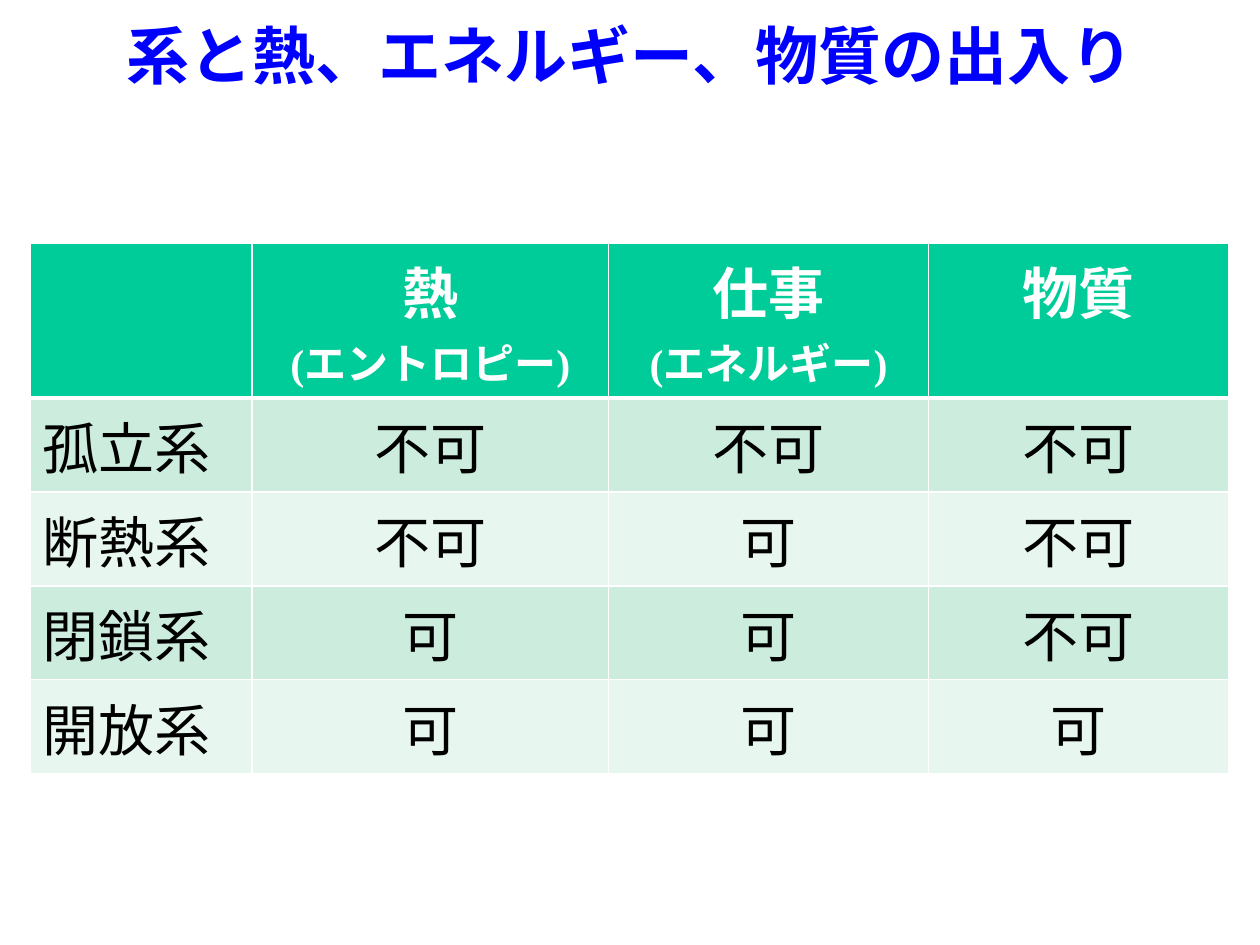
import pptx
import pptx.util
import pptx.dml.color
import pptx.enum.lang
import pptx.enum.text
import pptx.oxml
from pptx.oxml.ns import nsdecls

Inches = pptx.util.Inches
RGBColor = pptx.dml.color.RGBColor
ALIGN = pptx.enum.text.PP_ALIGN

BLUE = RGBColor(0x00, 0x00, 0xFF)
WHITE = RGBColor(0xFF, 0xFF, 0xFF)
BLACK = RGBColor(0x00, 0x00, 0x00)
GREEN = RGBColor(0x00, 0xCC, 0x99)
BANDS = [RGBColor(0xCC, 0xEC, 0xDE), RGBColor(0xE7, 0xF6, 0xEF)]
FONT = "Times New Roman"

# Content: a header cell is a list of paragraphs, each a list of (text, size);
# "\v" ends a line inside a paragraph
TITLE = "系と熱、エネルギー、物質の出入り"
HEADS = [
    [],
    [[("熱", 32)], [("(エントロピー)", 24)]],
    [[("仕事\v", 32), ("(エネルギー)", 24)]],
    [[("物質", 32)]],
]
ROWS = [
    ("孤立系", "不可", "不可", "不可"),
    ("断熱系", "不可", "可", "不可"),
    ("閉鎖系", "可", "可", "不可"),
    ("開放系", "可", "可", "可"),
]
WIDTHS = [1.76, 2.83, 2.54, 2.38]
HEIGHTS = [0.75] + [0.72] * len(ROWS)


def write(frame, paras, color=BLACK, bold=False, align=ALIGN.CENTER):
    for i, runs in enumerate(paras):
        para = frame.add_paragraph() if i else frame.paragraphs[0]
        para.alignment = align
        for text, size in runs:
            run = para.add_run()
            run.text = text.rstrip("\v")
            font = run.font
            font.name, font.size, font.bold = FONT, pptx.util.Pt(size), bold
            font.color.rgb = color
            font.language_id = pptx.enum.lang.MSO_LANGUAGE_ID.JAPANESE
            if text.endswith("\v"):
                para.add_line_break()


def paint(cell, color, base=1):
    """Fill a cell and give it white borders; base is the lower one in points."""
    props = cell._tc.get_or_add_tcPr()
    for side, width in (("L", 1), ("R", 1), ("T", 1), ("B", base)):
        props.append(pptx.oxml.parse_xml(
            f'<a:ln{side} {nsdecls("a")} w="{pptx.util.Pt(width)}">'
            f'<a:solidFill><a:srgbClr val="{WHITE}"/></a:solidFill></a:ln{side}>'))
    cell.fill.solid()
    cell.fill.fore_color.rgb = color


deck = pptx.Presentation()
deck.slide_width, deck.slide_height = Inches(10), Inches(7.5)
slide = deck.slides.add_slide(deck.slide_layouts[5])

# Title
title = slide.shapes.title
title.left, title.top = Inches(0), Inches(0.02)
title.width, title.height = Inches(10), Inches(0.82)
title.text_frame.vertical_anchor = pptx.enum.text.MSO_ANCHOR.MIDDLE
write(title.text_frame, [[(TITLE, 36)]], color=BLUE, bold=True)

# Table of systems
holder = slide.shapes.add_table(
    len(HEIGHTS), len(WIDTHS), Inches(0.24), Inches(1.93), Inches(9.52), Inches(3.93))
table = holder.table
for col, width in zip(table.columns, WIDTHS):
    col.width = Inches(width)
for row, height in zip(table.rows, HEIGHTS):
    row.height = Inches(height)
holder.width, holder.height = Inches(9.52), Inches(3.93)

# Header row
for c, paras in enumerate(HEADS):
    cell = table.cell(0, c)
    paint(cell, GREEN, base=3)
    write(cell.text_frame, paras, color=WHITE, bold=True)

# Body rows
for r, words in enumerate(ROWS):
    for c, word in enumerate(words):
        cell = table.cell(r + 1, c)
        paint(cell, BANDS[r % 2], base=1)
        if r == 0:
            top = cell._tc.tcPr.find(pptx.oxml.ns.qn("a:lnT"))
            top.set("w", str(pptx.util.Pt(3)))
        write(cell.text_frame, [[(word, 32)]],
              align=ALIGN.CENTER if c else ALIGN.LEFT)

deck.save("out.pptx")
